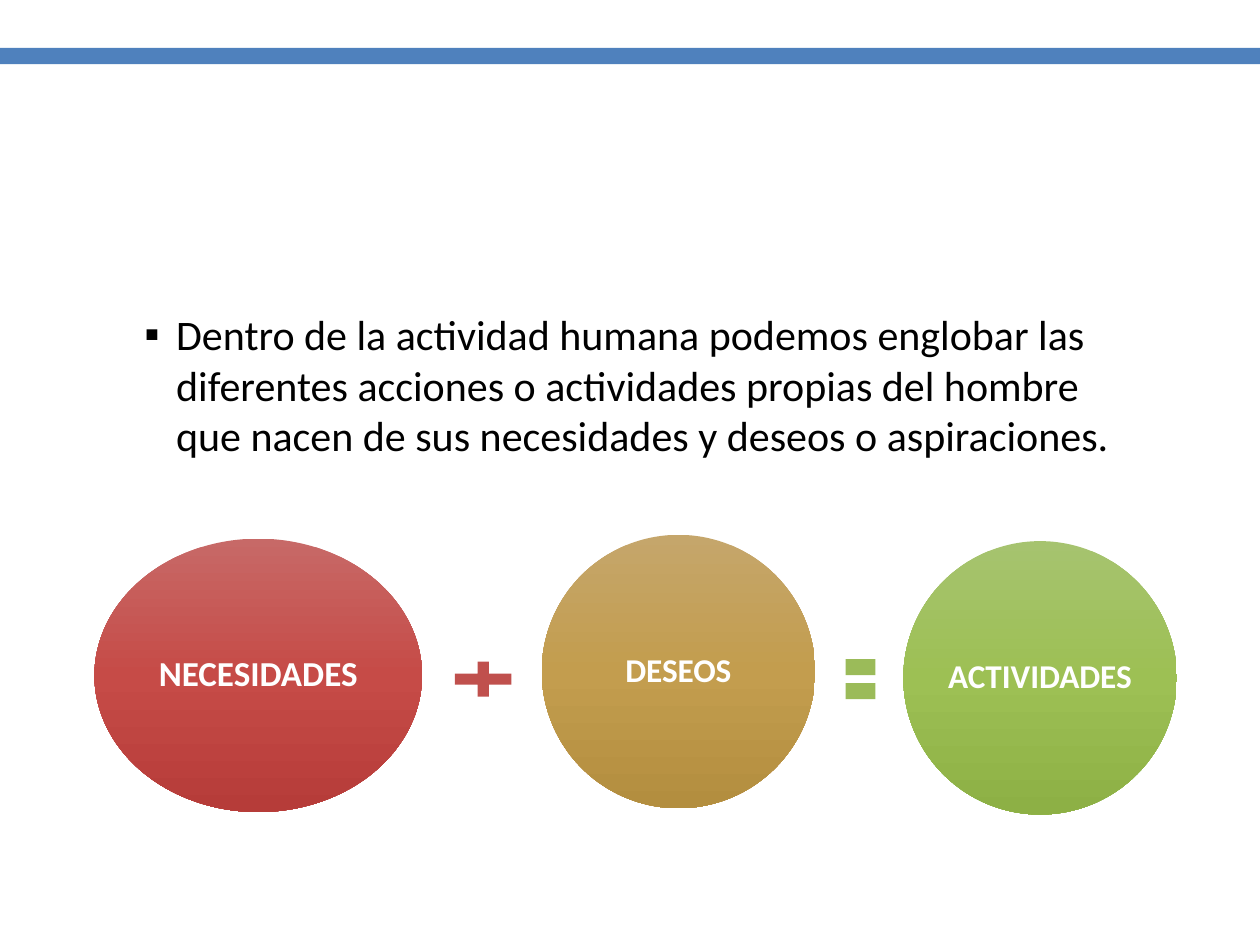
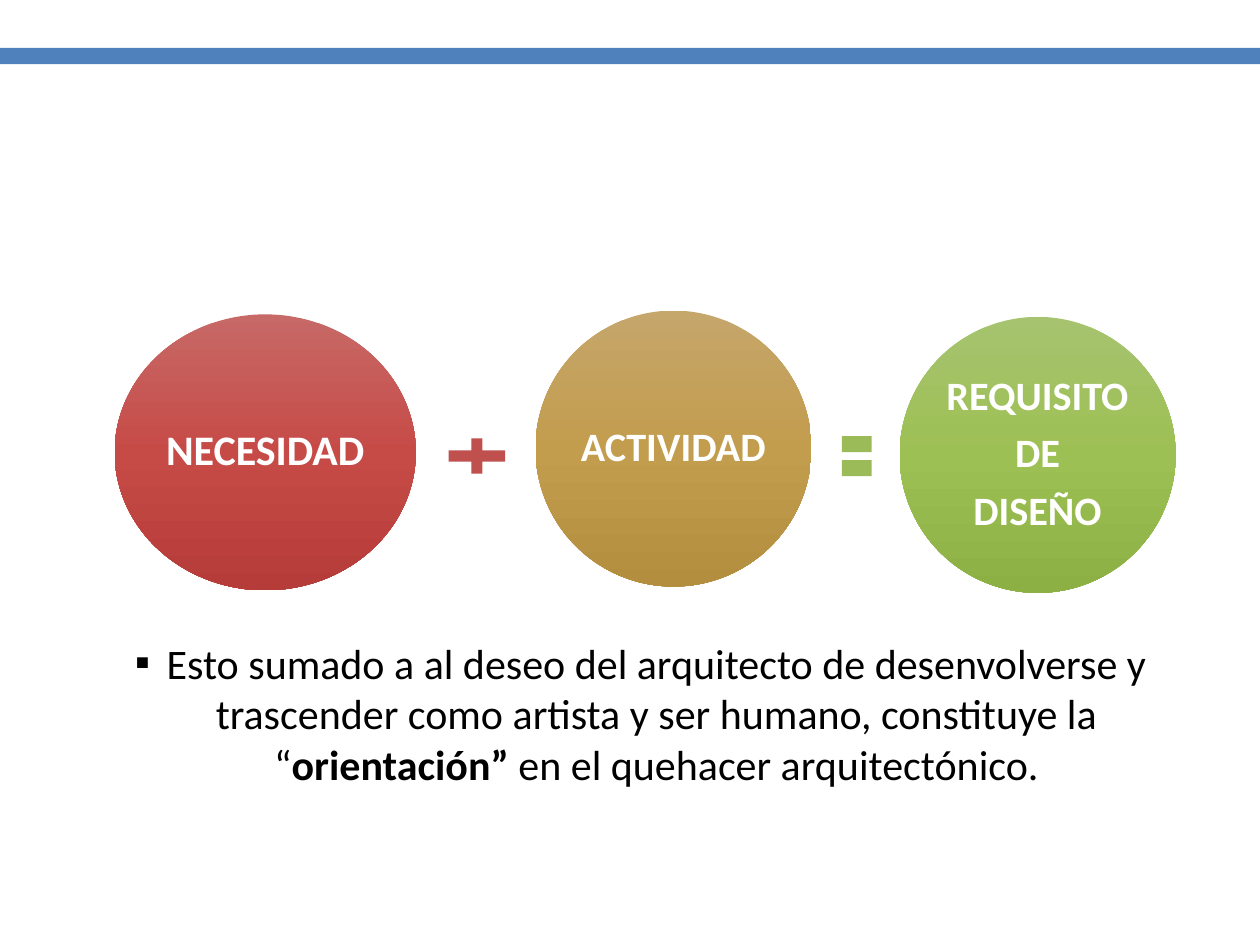
from copy import deepcopy

from lxml import etree
from pptx import Presentation
from pptx.dml.color import RGBColor
from pptx.enum.shapes import MSO_SHAPE
from pptx.enum.text import MSO_ANCHOR, PP_ALIGN
from pptx.oxml.ns import qn
from pptx.util import Inches, Pt

FONT = "Calibri"
COLORS = {
    "band": "4F81BD",
    "text": "000000",
    "label": "FFFFFF",
    "plus": "C0504D",
    "equal": "9BBB59",
}
GRADIENTS = {
    "red": ("C76967", "C64B47", "B63C39"),
    "gold": ("C5A66B", "C39D4E", "B38E3F"),
    "green": ("A6C36F", "9DC054", "8DB045"),
}
SIGN_SIZES = {"plus": (0.61, 0.38), "equal": (0.32, 0.54)}
SIGN_SHAPES = {"plus": MSO_SHAPE.MATH_PLUS, "equal": MSO_SHAPE.MATH_EQUAL}


def rgb(name):
    return RGBColor.from_string(COLORS[name])


def add_plain_shape(slide, preset, left, top, width, height):
    shape = slide.shapes.add_shape(
        preset, Inches(left), Inches(top), Inches(width), Inches(height))
    shape.shadow.inherit = False
    shape.line.fill.background()
    return shape


def add_solid_shape(slide, preset, color, *box):
    shape = add_plain_shape(slide, preset, *box)
    shape.fill.solid()
    shape.fill.fore_color.rgb = rgb(color)


def fill_gradient(shape, hexes):
    """Fill from top to bottom with three evenly spaced colours."""
    shape.fill.gradient()
    shape.fill.gradient_angle = 270
    stops = shape._element.spPr.find(qn("a:gradFill")).find(qn("a:gsLst"))
    stops.insert(1, deepcopy(stops[0]))
    for index, (stop, color) in enumerate(zip(shape.fill.gradient_stops, hexes)):
        stop.position = index / 2
        stop.color.rgb = RGBColor.from_string(color)


def style_font(font, size, color, bold=False):
    font.name = FONT
    font.size = Pt(size)
    font.bold = bold
    font.color.rgb = rgb(color)


def add_term(slide, label, size, gradient, *box):
    """Draw one ellipse of the equation with its centred label."""
    ellipse = add_plain_shape(slide, MSO_SHAPE.OVAL, *box)
    fill_gradient(ellipse, GRADIENTS[gradient])
    frame = ellipse.text_frame
    frame.word_wrap = False
    frame.vertical_anchor = MSO_ANCHOR.MIDDLE
    frame.margin_left = frame.margin_right = Inches(0.03)
    frame.margin_top = frame.margin_bottom = Inches(0.03)
    frame.text = label
    for index, paragraph in enumerate(frame.paragraphs):
        paragraph.alignment = PP_ALIGN.CENTER
        paragraph.line_spacing = 0.9
        if index:
            paragraph.space_before = Pt(0.35 * size)
        style_font(paragraph.font, size, "label", bold=True)


def add_equation(slide, left, middle, first_width, diameter, terms):
    """Lay out term + term = term from left, around the height of middle."""
    widths = (first_width, diameter, diameter)
    drops = (0, -0.03, 0.02)
    signs = (("plus", 0.18, 0.16), ("equal", 0.2, 0.18))
    for index, (label, size, gradient) in enumerate(terms):
        top = middle + drops[index] - diameter / 2
        add_term(slide, label, size, gradient, left, top, widths[index], diameter)
        left += widths[index]
        if index < len(signs):
            sign, gap_before, gap_after = signs[index]
            width, height = SIGN_SIZES[sign]
            add_solid_shape(slide, SIGN_SHAPES[sign], sign, left + gap_before,
                            middle + 0.03 - height / 2, width, height)
            left += gap_before + width + gap_after


def add_statement(slide, left, top, width, height, runs, alignment=PP_ALIGN.LEFT):
    """Write one bulleted paragraph from (text, bold) pairs."""
    box = slide.shapes.add_textbox(
        Inches(left), Inches(top), Inches(width), Inches(height))
    box.text_frame.word_wrap = True
    paragraph = box.text_frame.paragraphs[0]
    properties = paragraph._p.get_or_add_pPr()
    properties.set("marL", str(Inches(0.25)))
    properties.set("indent", str(-Inches(0.25)))
    etree.SubElement(properties, qn("a:buFont")).set("typeface", FONT)
    etree.SubElement(properties, qn("a:buChar")).set("char", "▪")
    paragraph.alignment = alignment
    for text, bold in runs:
        run = paragraph.add_run()
        run.text = text
        style_font(run.font, 24, "text", bold)


def add_banded_slide(deck):
    slide = deck.slides.add_slide(deck.slide_layouts[6])
    add_solid_shape(slide, MSO_SHAPE.RECTANGLE, "band", 0, 0.38, 10, 0.13)
    return slide


def build_activities_slide(deck):
    slide = add_banded_slide(deck)
    add_statement(slide, 1.05, 2.4, 7.9, 1.59, [
        ("Dentro de la actividad humana podemos englobar las diferentes "
         "acciones o actividades propias del hombre que nacen de sus "
         "necesidades y deseos o aspiraciones.", False),
    ])
    add_equation(slide, 0.75, 5.36, 2.6, 2.17, [
        ("NECESIDADES", 20, "red"),
        ("DESEOS", 19, "gold"),
        ("ACTIVIDADES", 19, "green"),
    ])


def build_requirement_slide(deck):
    slide = add_banded_slide(deck)
    add_statement(slide, 0.91, 5.01, 8.35, 1.4, [
        ("Esto sumado a al deseo del arquitecto de desenvolverse y trascender "
         "como artista y ser humano, constituye la “", False),
        ("orientación” ", True),
        ("en el quehacer arquitectónico.", False),
    ], PP_ALIGN.CENTER)
    add_equation(slide, 0.91, 3.59, 2.39, 2.19, [
        ("NECESIDAD", 24, "red"),
        ("ACTIVIDAD", 23, "gold"),
        ("REQUISITO\nDE\nDISEÑO", 23, "green"),
    ])


def main():
    deck = Presentation()
    deck.slide_width = Inches(10)
    deck.slide_height = Inches(7.5)
    build_activities_slide(deck)
    build_requirement_slide(deck)
    deck.save("out.pptx")


if __name__ == "__main__":
    main()
